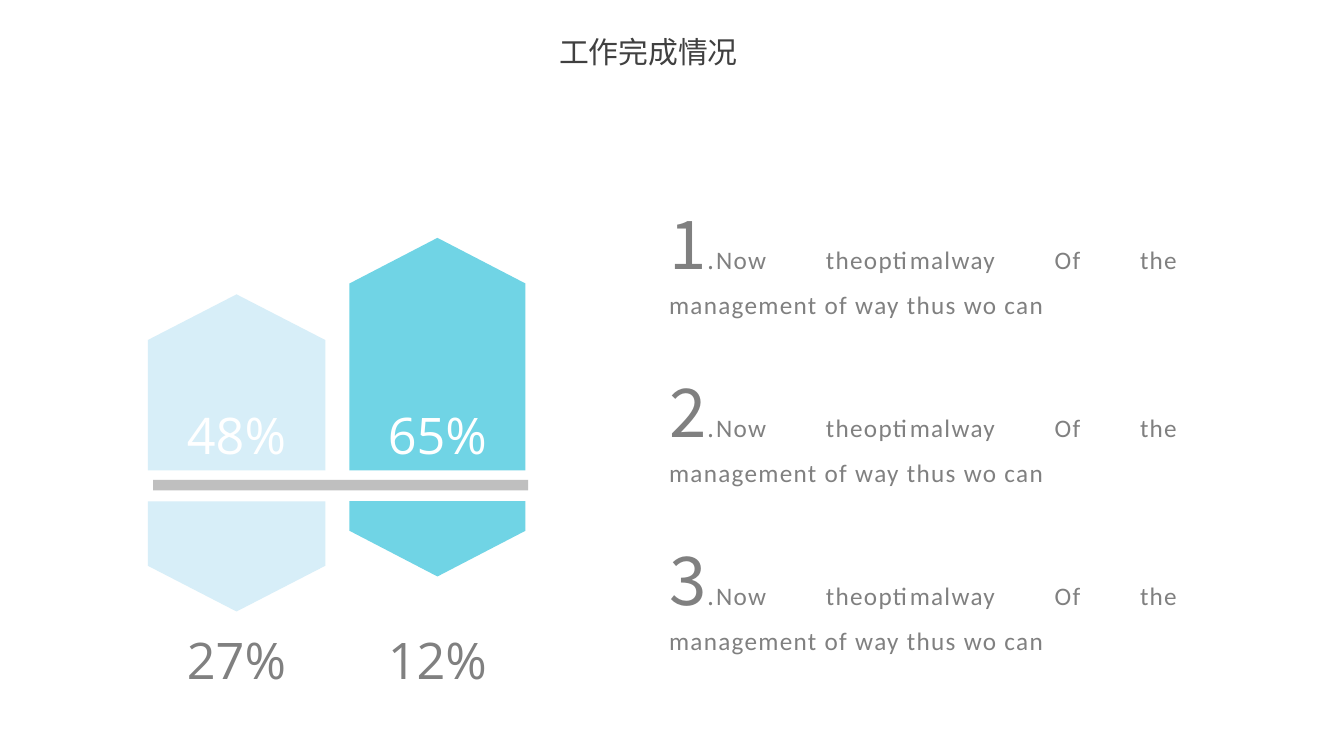
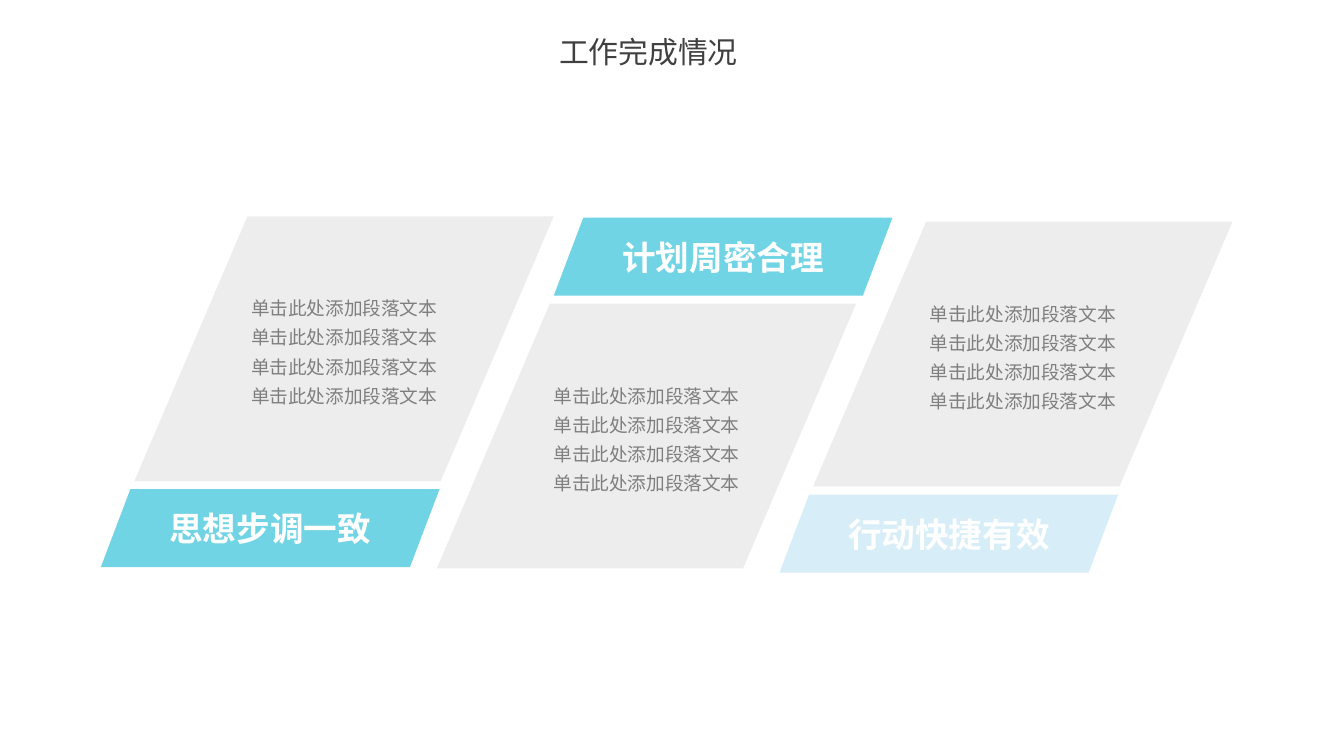
"""Build two work-progress slides: a hexagon bar comparison and three slanted panels."""
from lxml.etree import SubElement
from pptx import Presentation
from pptx.dml.color import RGBColor
from pptx.enum.shapes import MSO_SHAPE as SHAPE
from pptx.enum.text import MSO_ANCHOR as ANCHOR, MSO_AUTO_SIZE as FIT, PP_ALIGN as ALIGN
from pptx.oxml.ns import qn
from pptx.util import Inches, Pt

AQUA = RGBColor(0x70, 0xD4, 0xE5)
PALE = RGBColor(0xD7, 0xEE, 0xF8)
WHITE = RGBColor(0xFF, 0xFF, 0xFF)
DARK = RGBColor(0x40, 0x40, 0x40)
GRAY = RGBColor(0x80, 0x80, 0x80)
BODY = RGBColor(0x7F, 0x7F, 0x7F)
PANEL = RGBColor(0xA6, 0xA6, 0xA6)
BAR = RGBColor(0xBF, 0xBF, 0xBF)
CJK = "Noto Sans CJK SC"


def set_font(r, size, face, color, bold=False):
    r.font.size, r.font.name, r.font.bold = Pt(size), face, bold
    r.font.color.rgb = color
    SubElement(r.font._element, qn("a:ea")).set("typeface", CJK)


def add_outline(s, points, color):
    pts = [(Inches(x), Inches(y)) for x, y in points]
    builder = s.shapes.build_freeform(*pts[0], scale=1.0)
    builder.add_line_segments(pts[1:], close=True)
    sp = builder.convert_to_shape()
    sp.shadow.inherit = False
    sp.fill.solid()
    sp.fill.fore_color.rgb = color
    sp.line.fill.background()
    return sp


prs = Presentation()
prs.slide_width = Inches(10)
prs.slide_height = prs.slide_width * 9 // 16
slides = [prs.slides.add_slide(prs.slide_layouts[6]) for _ in range(2)]

for s in slides:
    tf = s.shapes.add_textbox(Inches(4.08), Inches(0.21), Inches(1.5), Inches(0.35)).text_frame
    tf.margin_left = tf.margin_right = Inches(0.08)
    tf.margin_top = tf.margin_bottom = Inches(0.04)
    tf.word_wrap, tf.auto_size = False, FIT.SHAPE_TO_FIT_TEXT
    tf.text = "工作完成情况"
    set_font(tf.paragraphs[0].runs[0], 16, CJK, DARK)

s = slides[0]
columns = [(1.1, 2.42, 2.19, 4.55, PALE, "48%", "27%"),
           (2.6, 3.91, 1.77, 4.29, AQUA, "65%", "12%")]
for left, right, top, bottom, color, upper, lower in columns:
    mid = (left + right) / 2
    for base, tip, shoulder in ((3.5, top, top + 0.34), (3.73, bottom, bottom - 0.34)):
        add_outline(s, [(left, base), (right, base), (right, shoulder),
                        (mid, tip), (left, shoulder)], color)
    for text, y, ink in ((upper, 2.96, WHITE), (lower, 4.63, GRAY)):
        tf = s.shapes.add_textbox(Inches(mid - 0.7), Inches(y), Inches(1.4), Inches(0.56)).text_frame
        tf.word_wrap, tf.auto_size = True, FIT.SHAPE_TO_FIT_TEXT
        tf.text = text
        p = tf.paragraphs[0]
        p.alignment = ALIGN.CENTER
        set_font(p.runs[0], 27, "Open Sans", ink)

sp = s.shapes.add_shape(SHAPE.RECTANGLE, Inches(1.14), Inches(3.57), Inches(2.79), Inches(0.08))
sp.shadow.inherit = False
sp.fill.solid()
sp.fill.fore_color.rgb = BAR
sp.line.fill.background()

for i in range(3):
    tf = s.shapes.add_textbox(Inches(4.88), Inches(1.34 + 1.25 * i), Inches(3.99), Inches(1.1)).text_frame
    tf.word_wrap, tf.auto_size = True, FIT.SHAPE_TO_FIT_TEXT
    p = tf.paragraphs[0]
    p.alignment, p.line_spacing = ALIGN.JUSTIFY, 1.2
    for text, size, face in ((str(i + 1), 36, CJK), (".", 13.5, CJK),
                             ("Now theoptimalway Of the management of way thus wo can ", 13.5, "Calibri")):
        r = p.add_run()
        r.text = text
        set_font(r, size, face, GRAY)
        r.font._element.set("spc", "75")

s = slides[1]
panels = [("思想步调一致", AQUA, 0.75, 3.64, 1, 1.61),
          ("计划周密合理", AQUA, 4.12, 1.62, 3.25, 2.26),
          ("行动快捷有效", PALE, 5.8, 3.68, 6.05, 1.65)]
for heading, color, x, y, panel_x, panel_y in panels:
    sp = add_outline(s, [(x + 0.22, y), (x + 2.52, y), (x + 2.3, y + 0.58), (x, y + 0.58)], color)
    tf = sp.text_frame
    tf.vertical_anchor = ANCHOR.MIDDLE
    tf.text = heading
    tf.paragraphs[0].alignment = ALIGN.CENTER
    set_font(tf.paragraphs[0].runs[0], 18, "Arial", WHITE, True)

    sp = s.shapes.add_shape(SHAPE.PARALLELOGRAM, Inches(panel_x), Inches(panel_y), Inches(3.12), Inches(1.97))
    sp.adjustments[0] = 0.427
    sp.shadow.inherit = False
    sp.fill.solid()
    sp.fill.fore_color.rgb = PANEL
    SubElement(sp._element.spPr.find(qn("a:solidFill"))[0], qn("a:alpha")).set("val", "20000")
    sp.line.fill.background()
    tf = sp.text_frame
    tf.margin_left = tf.margin_right = tf.margin_top = tf.margin_bottom = 0
    tf.vertical_anchor = ANCHOR.MIDDLE
    tf.text = "\n".join(["单击此处添加段落文本"] * 4)
    for p in tf.paragraphs:
        p.alignment, p.line_spacing = ALIGN.CENTER, 1.3
        set_font(p.runs[0], 10, CJK, BODY)

prs.save("out.pptx")
